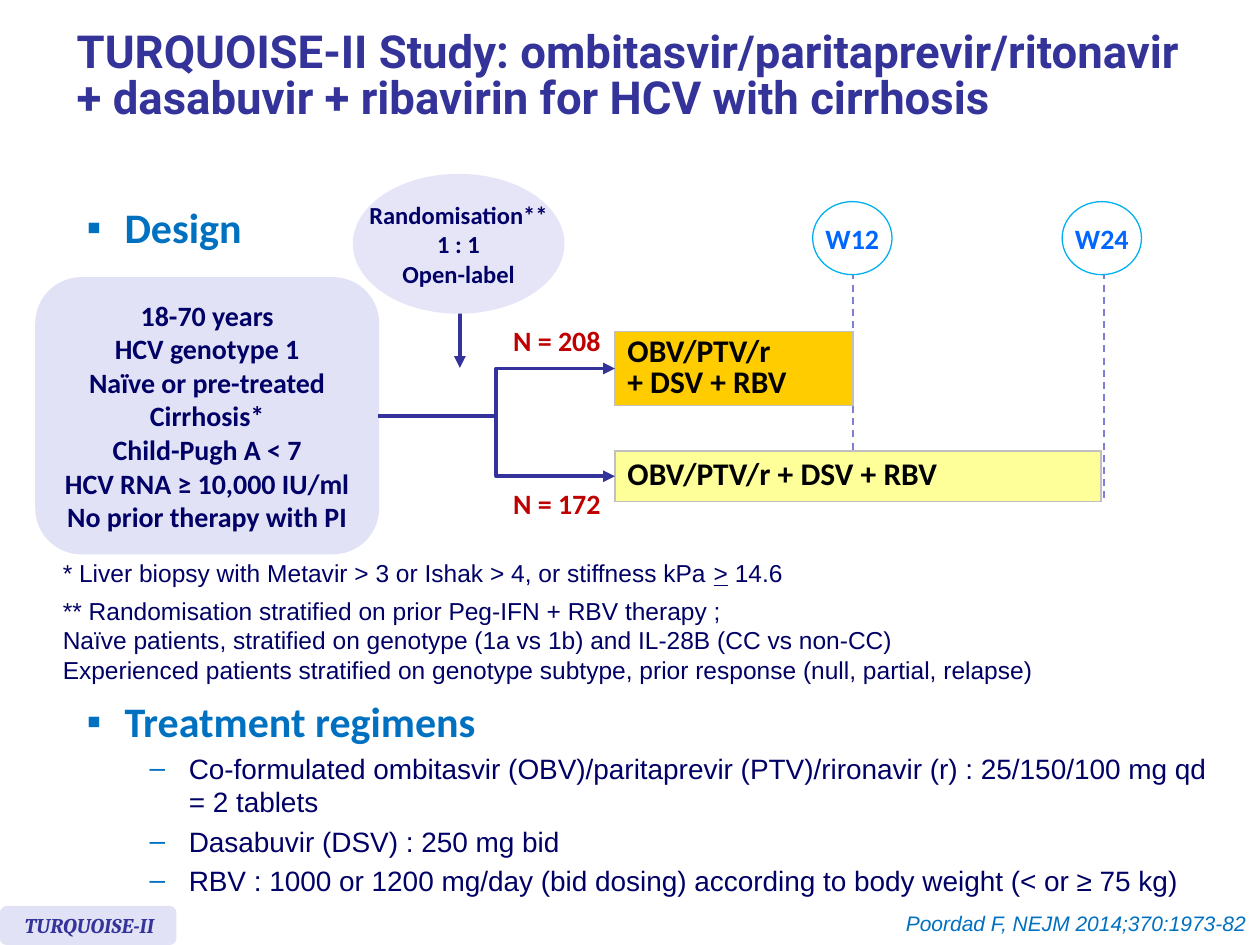
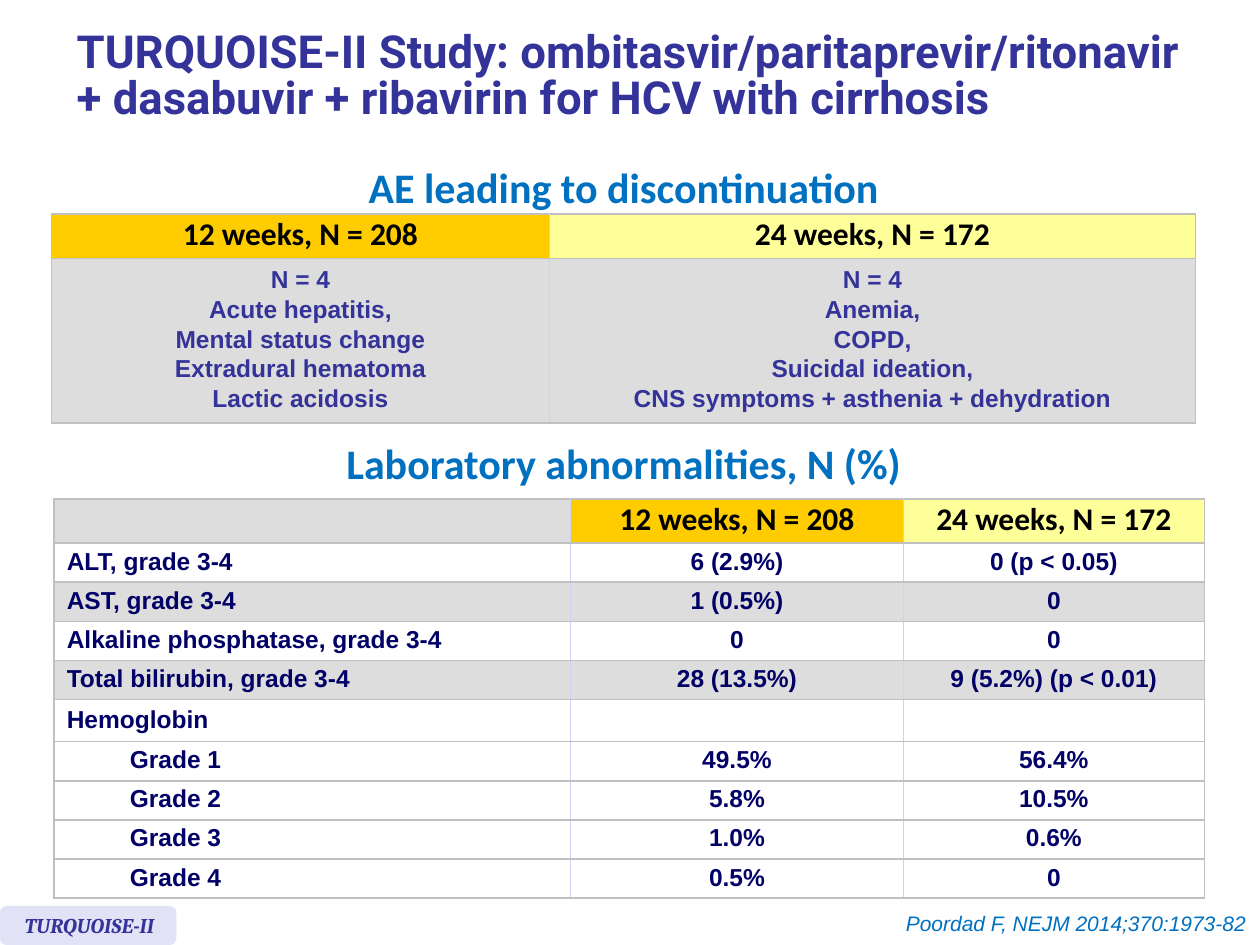
from lxml.etree import SubElement
from pptx import Presentation
from pptx.dml.color import RGBColor
from pptx.enum.dml import MSO_LINE
from pptx.enum.shapes import MSO_CONNECTOR, MSO_SHAPE
from pptx.enum.text import MSO_ANCHOR, PP_ALIGN
from pptx.oxml.ns import qn
from pptx.util import Inches, Pt


class Theme:
    indigo, navy, blue, red = "333399", "000066", "0070C0", "C00000"
    black, white, grey = "000000", "FFFFFF", "DDDDDD"
    lavender, pale_lavender = "E2E2F6", "E5E5F7"
    orange, yellow = "FFCC00", "FFFF99"
    week_text, week_ring, week_line = "0066FF", "00B0F0", "7E7ED4"
    rule, inner_rule = "C0C0C0", "D0D0F0"
    title_size, heading_size, arm_size = 26, 24, 18
    text_size, note_size, footer_size = 16, 14, 12
    title_font, heading_font, body_font, badge_font = "Roboto", "Calibri", "Arial", "Cambria"


CENTER = PP_ALIGN.CENTER
HEADING = dict(size=Theme.heading_size, font=Theme.heading_font, color=Theme.blue, bold=True)
ARM = dict(size=Theme.arm_size, font=Theme.heading_font, color=Theme.black, bold=True,
           line_spacing=0.8)
LABEL = dict(size=Theme.text_size, font=Theme.heading_font, bold=True, align=CENTER)
NOTE = dict(size=Theme.note_size, font=Theme.body_font, color=Theme.navy)
RESULT = dict(NOTE, bold=True, line_spacing=0.9)

ARMS = [("12 weeks, N = 208", Theme.orange), ("24 weeks, N = 172", Theme.yellow)]
ADVERSE_EVENTS = [
    ["N = 4", "Acute hepatitis,", "Mental status change", "Extradural hematoma",
     "Lactic acidosis"],
    ["N = 4", "Anemia,", "COPD,", "Suicidal ideation,",
     "CNS symptoms + asthenia + dehydration"],
]
LAB_RESULTS = [
    ("ALT, grade 3-4", "6 (2.9%)", "0 (p < 0.05)"),
    ("AST, grade 3-4", "1 (0.5%)", "0"),
    ("Alkaline phosphatase, grade 3-4", "0", "0"),
    ("Total bilirubin, grade 3-4", "28 (13.5%)", "9 (5.2%) (p < 0.01)"),
    ("Hemoglobin", "", ""),
    ("Grade 1", "49.5%", "56.4%"),
    ("Grade 2", "5.8%", "10.5%"),
    ("Grade 3", "1.0%", "0.6%"),
    ("Grade 4", "0.5%", "0"),
]


def rgb(color):
    return RGBColor.from_string(color)


def inches(*lengths):
    return [Inches(length) for length in lengths]


def add_bullet(para, bullet, color):
    properties = para._p.get_or_add_pPr()
    SubElement(SubElement(properties, qn("a:buClr")), qn("a:srgbClr"), val=color)
    SubElement(properties, qn("a:buFont"), typeface=Theme.body_font)
    SubElement(properties, qn("a:buChar"), char=bullet)


def write(frame, *paragraphs, size, font, color, bold=False, italic=False, align=None,
          line_spacing=None, space_before=0, bullet=None, indent=0, hanging=0):
    """Append paragraphs; in a tuple of parts, every second part is underlined."""
    for text in paragraphs:
        is_first = not frame.paragraphs[0].runs
        para = frame.paragraphs[0] if is_first else frame.add_paragraph()
        if indent:
            properties = para._p.get_or_add_pPr()
            properties.set("marL", str(Inches(indent)))
            properties.set("indent", str(Inches(-hanging)))
        if bullet:
            add_bullet(para, bullet, Theme.blue)
        para.alignment = align
        para.line_spacing = line_spacing
        para.space_before = Pt(0 if is_first else space_before)
        if not text:
            SubElement(para._p, qn("a:endParaRPr"), sz=str(size * 100))
            continue
        parts = text if isinstance(text, tuple) else (text,)
        for part_number, part in enumerate(parts):
            for line_number, line in enumerate(part.split("\n")):
                if line_number:
                    para.add_line_break()
                span = para.add_run()
                span.text = line
                span.font.size, span.font.name = Pt(size), font
                span.font.bold, span.font.italic = bold, italic
                span.font.underline = part_number % 2 == 1
                span.font.color.rgb = rgb(color)


def add_text(page, place, *paragraphs, anchor=MSO_ANCHOR.TOP, wrap=True, **style):
    frame = page.shapes.add_textbox(*inches(*place)).text_frame
    frame.word_wrap = wrap
    frame.vertical_anchor = anchor
    write(frame, *paragraphs, **style)
    return frame


def add_panel(page, kind, place, *paragraphs, fill, ring=None, **style):
    panel = page.shapes.add_shape(kind, *inches(*place))
    panel.shadow.inherit = False
    panel.fill.solid()
    panel.fill.fore_color.rgb = rgb(fill)
    if ring:
        panel.line.color.rgb = rgb(ring)
        panel.line.width = Pt(0.75)
    else:
        panel.line.fill.background()
    panel.text_frame.word_wrap = False
    panel.text_frame.vertical_anchor = MSO_ANCHOR.MIDDLE
    write(panel.text_frame, *paragraphs, **style)
    return panel


def add_line(page, start, end, kind=MSO_CONNECTOR.STRAIGHT, color=Theme.indigo, width=2.25):
    connector = page.shapes.add_connector(kind, *inches(*start, *end))
    connector.line.color.rgb = rgb(color)
    connector.line.width = Pt(width)
    SubElement(connector._element.spPr, qn("a:effectLst"))
    return connector.line


def add_arrow(page, start, end, **look):
    line = add_line(page, start, end, **look)
    SubElement(line._get_or_add_ln(), qn("a:tailEnd"), type="triangle")


def set_borders(cell, left, right):
    properties = cell._tc.get_or_add_tcPr()
    for side, color in zip("LRTB", (left, right, Theme.rule, Theme.rule)):
        border = SubElement(properties, qn(f"a:ln{side}"), w=str(Pt(1)))
        SubElement(SubElement(border, qn("a:solidFill")), qn("a:srgbClr"), val=color)


def add_grid(page, left, top, widths, heights):
    """Add an empty table with borders and return it."""
    place = inches(left, top, sum(widths), sum(heights))
    table = page.shapes.add_table(len(heights), len(widths), *place).table
    table.first_row = table.horz_banding = False
    for column, width in zip(table.columns, widths):
        column.width = Inches(width)
    for row, height in zip(table.rows, heights):
        row.height = Inches(height)
        for number, cell in enumerate(row.cells, 1):
            set_borders(cell, Theme.inner_rule if number > 1 else Theme.rule,
                        Theme.inner_rule if number < len(widths) else Theme.rule)
    return table


def fill_cell(cell, *paragraphs, fill, **style):
    cell.fill.solid()
    cell.fill.fore_color.rgb = rgb(fill)
    cell.vertical_anchor = MSO_ANCHOR.MIDDLE
    write(cell.text_frame, *paragraphs, **style)


def add_study_page(deck):
    """Add a blank page with the study title, badge and citation."""
    page = deck.slides.add_slide(deck.slide_layouts[6])
    add_text(page, (0.51, 0.08, 9.49, 1.07),
             "TURQUOISE-II Study: ombitasvir/paritaprevir/ritonavir\n"
             "+ dasabuvir + ribavirin for HCV with cirrhosis",
             size=Theme.title_size, font=Theme.title_font, color=Theme.indigo, bold=True,
             line_spacing=0.85, anchor=MSO_ANCHOR.MIDDLE)
    badge = add_panel(page, MSO_SHAPE.ROUNDED_RECTANGLE, (0, 7.19, 1.4, 0.31), "TURQUOISE-II",
                      fill=Theme.lavender, size=Theme.footer_size, font=Theme.badge_font,
                      color=Theme.indigo, bold=True, italic=True, align=PP_ALIGN.LEFT)
    badge.text_frame.margin_left = Inches(0.18)
    add_text(page, (5.48, 7.18, 4.51, 0.3), "Poordad F, NEJM 2014;370:1973-82",
             size=Theme.footer_size, font=Theme.body_font, color=Theme.blue, italic=True,
             align=PP_ALIGN.RIGHT)
    return page


def add_section(page, top, heading):
    return add_text(page, (0.59, top, 9.13, 0.56), heading, bullet="▪", indent=0.3,
                    hanging=0.3, **HEADING)


def add_trial_diagram(page):
    for week, line_x, circle_x in (("W12", 6.77, 6.45), ("W24", 8.76, 8.43)):
        week_line = add_line(page, (line_x, 1.97), (line_x, 3.95), color=Theme.week_line, width=1)
        week_line.dash_style = MSO_LINE.DASH
        add_panel(page, MSO_SHAPE.OVAL, (circle_x, 1.6, 0.63, 0.58), week, fill=Theme.white,
                  ring=Theme.week_ring, color=Theme.week_text, **LABEL)
    add_arrow(page, (3.65, 2.48), (3.65, 2.92))
    add_panel(page, MSO_SHAPE.OVAL, (2.8, 1.38, 1.68, 1.11),
              "Randomisation**", "1 : 1", "Open-label", fill=Theme.pale_lavender,
              color=Theme.navy, **dict(LABEL, size=Theme.note_size))
    add_panel(page, MSO_SHAPE.ROUNDED_RECTANGLE, (0.28, 2.2, 2.73, 2.2),
              "18-70 years", "HCV genotype 1", "Naïve or pre-treated", "Cirrhosis*",
              "Child-Pugh A < 7", "HCV RNA ≥ 10,000 IU/ml", "No prior therapy with PI",
              fill=Theme.lavender, color=Theme.navy, **LABEL)
    arms = [
        ("OBV/PTV/r\n+ DSV + RBV", Theme.orange, 2.63, 1.89, 0.59, "N = 208", 2.52),
        ("OBV/PTV/r + DSV + RBV", Theme.yellow, 3.58, 3.86, 0.4, "N = 172", 3.81),
    ]
    for regimen, fill, top, width, height, count, count_top in arms:
        arm = add_grid(page, 4.88, top, [width], [height])
        fill_cell(arm.cell(0, 0), regimen, fill=fill, **ARM)
        add_arrow(page, (3, 3.3), (4.88, top + height / 2), kind=MSO_CONNECTOR.ELBOW)
        add_text(page, (3.97, count_top, 0.9, 0.37), count, wrap=False, color=Theme.red, **LABEL)


def add_design_page(deck):
    page = add_study_page(deck)
    add_section(page, 1.55, "Design")
    add_trial_diagram(page)
    add_text(page, (0.4, 4.38, 7.16, 0.34),
             ("* Liver biopsy with Metavir > 3 or Ishak > 4, or stiffness kPa ", ">", " 14.6"),
             **NOTE)
    add_text(page, (0.4, 4.68, 7.96, 0.81),
             "** Randomisation stratified on prior Peg-IFN + RBV therapy ;",
             "Naïve patients, stratified on genotype (1a vs 1b) and IL-28B (CC vs non-CC)",
             "Experienced patients stratified on genotype subtype, prior response "
             "(null, partial, relapse)", wrap=False, **NOTE)
    regimens = add_section(page, 5.47, "Treatment regimens")
    write(regimens,
          "Co-formulated ombitasvir (OBV)/paritaprevir (PTV)/rironavir (r) : "
          "25/150/100 mg qd = 2 tablets",
          "Dasabuvir (DSV) : 250 mg bid",
          "RBV : 1000 or 1200 mg/day (bid dosing) according to body weight (< or ≥ 75 kg)",
          size=Theme.text_size, font=Theme.body_font, color=Theme.navy, bullet="–",
          indent=0.81, hanging=0.31, space_before=3.2)


def fill_arm_headers(table, first_column):
    for column, (arm, fill) in enumerate(ARMS, first_column):
        fill_cell(table.cell(0, column), arm, fill=fill, align=CENTER, **ARM)


def add_safety_page(deck):
    page = add_study_page(deck)
    for top, heading in ((1.23, "AE leading to discontinuation"),
                         (3.42, "Laboratory abnormalities, N (%)")):
        add_text(page, (0.41, top, 9.08, 0.5), heading, align=CENTER, **HEADING)

    events = add_grid(page, 0.41, 1.7, [3.95, 5.13], [0.35, 1.3])
    fill_arm_headers(events, 0)
    for column, lines in enumerate(ADVERSE_EVENTS):
        fill_cell(events.cell(1, column), *lines, fill=Theme.grey, align=CENTER,
                  space_before=2.8, **dict(RESULT, color=Theme.indigo))

    heights = [0.35] + [0.3 if result else 0.32 for _, result, _ in LAB_RESULTS]
    labs = add_grid(page, 0.43, 3.96, [4.1, 2.64, 2.39], heights)
    fill_cell(labs.cell(0, 0), "", fill=Theme.grey, **RESULT)
    fill_arm_headers(labs, 1)
    for row, (measure, *results) in enumerate(LAB_RESULTS, 1):
        fill = Theme.grey if measure.startswith(("AST", "Total bilirubin")) else Theme.white
        indent = 0.5 if measure.startswith("Grade") else 0
        fill_cell(labs.cell(row, 0), measure, fill=fill, indent=indent, **RESULT)
        for column, result in enumerate(results, 1):
            fill_cell(labs.cell(row, column), result, fill=fill, align=CENTER, **RESULT)


def main():
    deck = Presentation()
    deck.slide_width, deck.slide_height = inches(10, 7.5)
    add_design_page(deck)
    add_safety_page(deck)
    deck.save("out.pptx")


if __name__ == "__main__":
    main()
